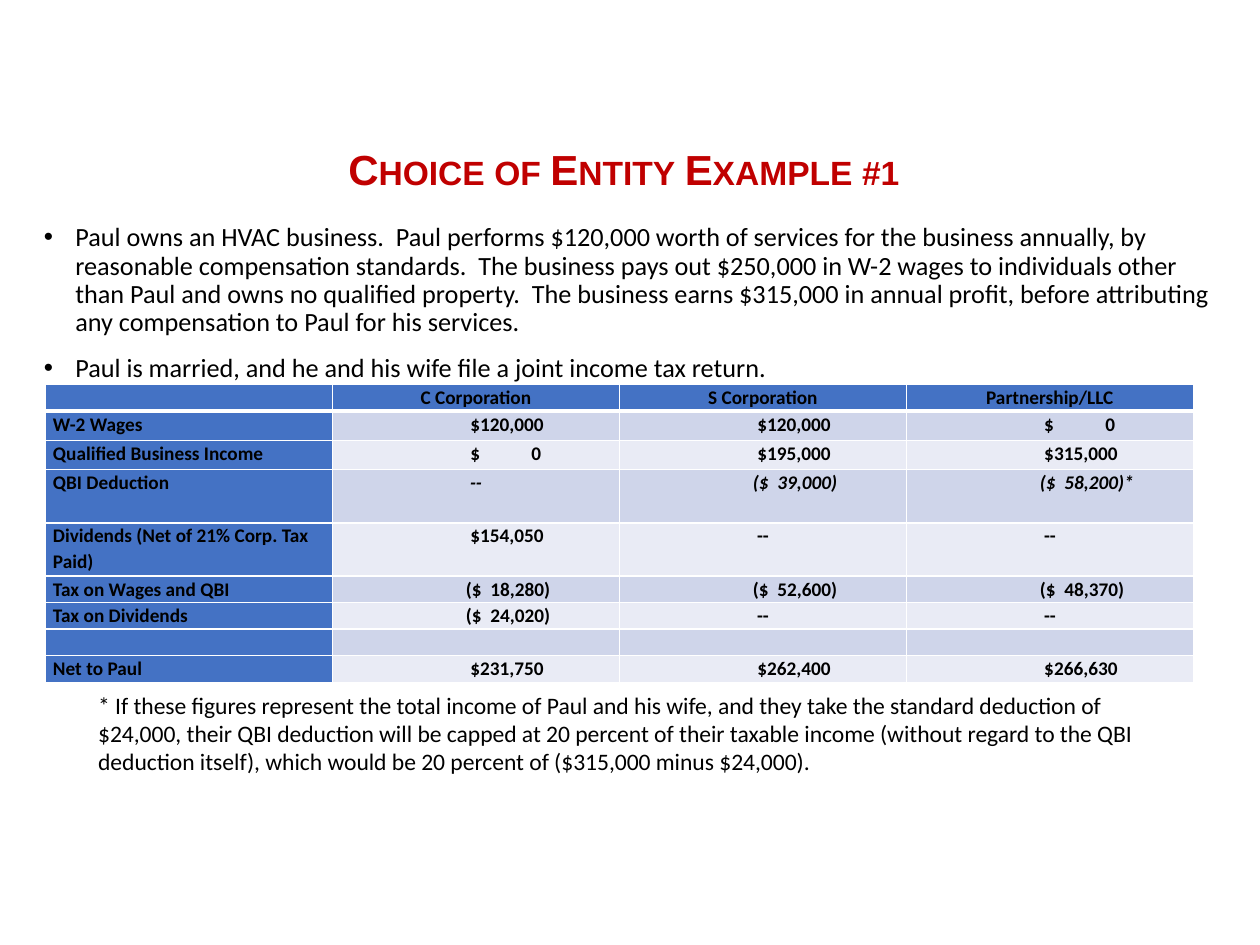
import pptx
import pptx.dml.color
import pptx.enum.text
import pptx.oxml
import pptx.oxml.ns
import pptx.util
from lxml import etree

Pt = pptx.util.Pt
ALIGN = pptx.enum.text.PP_ALIGN
ANCHOR = pptx.enum.text.MSO_ANCHOR

RED = pptx.dml.color.RGBColor(0xC0, 0x00, 0x00)
BLACK = pptx.dml.color.RGBColor(0x00, 0x00, 0x00)
BLUE = pptx.dml.color.RGBColor(0x44, 0x72, 0xC4)
DARK_BAND = pptx.dml.color.RGBColor(0xCF, 0xD5, 0xEA)
LIGHT_BAND = pptx.dml.color.RGBColor(0xE9, 0xEB, 0xF5)
WHITE = pptx.dml.color.RGBColor(0xFF, 0xFF, 0xFF)

TITLE = "Choice of Entity Example #1"
FACTS = [
    "Paul owns an HVAC business.  Paul performs $120,000 worth of services for the "
    "business annually, by reasonable compensation standards.  The business pays out "
    "$250,000 in W-2 wages to individuals other than Paul and owns no qualified property.  "
    "The business earns $315,000 in annual profit, before attributing any compensation "
    "to Paul for his services.",
    "Paul is married, and he and his wife file a joint income tax return.",
]
FOOTNOTE = (
    "* If these figures represent the total income of Paul and his wife, and they take the "
    "standard deduction of $24,000, their QBI deduction will be capped at 20 percent of their "
    "taxable income (without regard to the QBI deduction itself), which would be 20 percent "
    "of ($315,000 minus $24,000)."
)

COLUMN_WIDTH = 164
ONE_LINE, WAGE_LINE, TWO_LINES = 15.2, 16.8, 30.4
AMOUNT_TABS = (("l", 72), ("r", 115))
QBI_DEDUCTION = "QBI Deduction"
COMPARISON = [
    (ONE_LINE, "", "C Corporation", "S Corporation", "Partnership/LLC"),
    (WAGE_LINE, "W-2 Wages", "\t $120,000", "\t $120,000", "\t $\t0"),
    (WAGE_LINE, "Qualified Business Income", "\t $\t0", "\t $195,000", "\t $315,000"),
    (TWO_LINES, QBI_DEDUCTION, "--", "\t($  39,000)", "\t($  58,200)*"),
    (TWO_LINES, "Dividends (Net of 21% Corp. Tax Paid)", "\t $154,050", "--", "--"),
    (ONE_LINE, "Tax on Wages and QBI", "\t($  18,280)", "\t($  52,600)", "\t($  48,370)"),
    (ONE_LINE, "Tax on Dividends", "\t($  24,020)", "--", "--"),
    (ONE_LINE, "", "", "", ""),
    (ONE_LINE, "Net to Paul", "\t $231,750", "\t $262,400", "\t $266,630"),
]


def add_xml(parent, tag, **attributes):
    child = etree.SubElement(parent, pptx.oxml.ns.qn(tag))
    for key, value in attributes.items():
        child.set(key, str(value))
    return child


def style_font(font, name, size, color=BLACK, bold=False):
    font.name, font.size, font.bold = name, Pt(size), bold
    font.color.rgb = color


def add_text(slide, left, top, width, height, texts, font_name, size, **style):
    """Add a wrapping text box with one paragraph per text; return its frame."""
    frame = slide.shapes.add_textbox(Pt(left), Pt(top), Pt(width), Pt(height)).text_frame
    frame.word_wrap = True
    frame.text = "\n".join(texts)
    for paragraph in frame.paragraphs:
        style_font(paragraph.font, font_name, size, **style)
    return frame


def add_title(slide):
    frame = add_text(slide, 46, 65, 621, 67, [TITLE], "Arial", 24, color=RED, bold=True)
    frame.vertical_anchor = ANCHOR.MIDDLE
    paragraph = frame.paragraphs[0]
    paragraph.alignment = ALIGN.CENTER
    paragraph.line_spacing = 0.9
    paragraph.runs[0]._r.get_or_add_rPr().set("cap", "small")


def add_facts(slide):
    frame = add_text(slide, 18, 124.5, 687, 281, FACTS, "Calibri", 15)
    for paragraph in frame.paragraphs:
        paragraph.line_spacing = 0.9
        paragraph.space_before = Pt(10)
        properties = paragraph._p.get_or_add_pPr()
        properties.set("marL", str(Pt(18)))
        properties.set("indent", str(-Pt(18)))
        bullet_font = pptx.oxml.parse_xml(
            '<a:buFont %s typeface="Arial"/>' % pptx.oxml.ns.nsdecls("a"))
        bullet = pptx.oxml.parse_xml('<a:buChar %s char="•"/>' % pptx.oxml.ns.nsdecls("a"))
        default_font = properties.find(pptx.oxml.ns.qn("a:defRPr"))
        default_font.addprevious(bullet_font)
        default_font.addprevious(bullet)


def set_borders(cell, bottom_width):
    properties = cell._tc.get_or_add_tcPr()
    for side, width in (("L", 1), ("R", 1), ("T", 1), ("B", bottom_width)):
        line = add_xml(properties, "a:ln" + side, w=Pt(width))
        add_xml(add_xml(line, "a:solidFill"), "a:srgbClr", val=WHITE)


def set_amount_tabs(paragraph):
    tabs = pptx.oxml.parse_xml("<a:tabLst %s/>" % pptx.oxml.ns.nsdecls("a"))
    for side, position in AMOUNT_TABS:
        add_xml(tabs, "a:tab", pos=Pt(position), algn=side)
    paragraph._p.pPr.find(pptx.oxml.ns.qn("a:defRPr")).addprevious(tabs)


def fill_cell(cell, text, fill, centered, italic, bottom_width):
    cell.margin_left = cell.margin_right = Pt(4.3)
    cell.margin_top = cell.margin_bottom = 0
    set_borders(cell, bottom_width)
    cell.fill.solid()
    cell.fill.fore_color.rgb = fill
    cell.text = text
    paragraph = cell.text_frame.paragraphs[0]
    paragraph.line_spacing = 1.07
    paragraph.alignment = ALIGN.CENTER if centered else ALIGN.LEFT
    style_font(paragraph.font, "Calibri", 11, bold=True)
    paragraph.font.italic = italic
    if not text:
        add_xml(paragraph._p, "a:endParaRPr", sz=1100)
    if text.startswith("\t"):
        set_amount_tabs(paragraph)


def add_comparison(slide):
    columns = len(COMPARISON[0]) - 1
    height = sum(row[0] for row in COMPARISON)
    table = slide.shapes.add_table(len(COMPARISON), columns, Pt(26), Pt(219.6),
                                   Pt(columns * COLUMN_WIDTH), Pt(height)).table
    for column in table.columns:
        column.width = Pt(COLUMN_WIDTH)
    for r, (row_height, *texts) in enumerate(COMPARISON):
        table.rows[r].height = Pt(row_height)
        band = DARK_BAND if r % 2 else LIGHT_BAND
        for c, text in enumerate(texts):
            fill_cell(table.cell(r, c), text,
                      fill=BLUE if r == 0 or c == 0 else band,
                      centered=r == 0 or text == "--",
                      italic=c > 0 and texts[0] == QBI_DEDUCTION,
                      bottom_width=3 if r == 0 else 1)


def main():
    presentation = pptx.Presentation()
    presentation.slide_width, presentation.slide_height = Pt(720), Pt(540)
    slide = presentation.slides.add_slide(presentation.slide_layouts[6])
    add_title(slide)
    add_facts(slide)
    add_comparison(slide)
    add_text(slide, 49, 391, 633.5, 56, [FOOTNOTE], "Calibri", 13.5)
    presentation.save("out.pptx")


if __name__ == "__main__":
    main()
